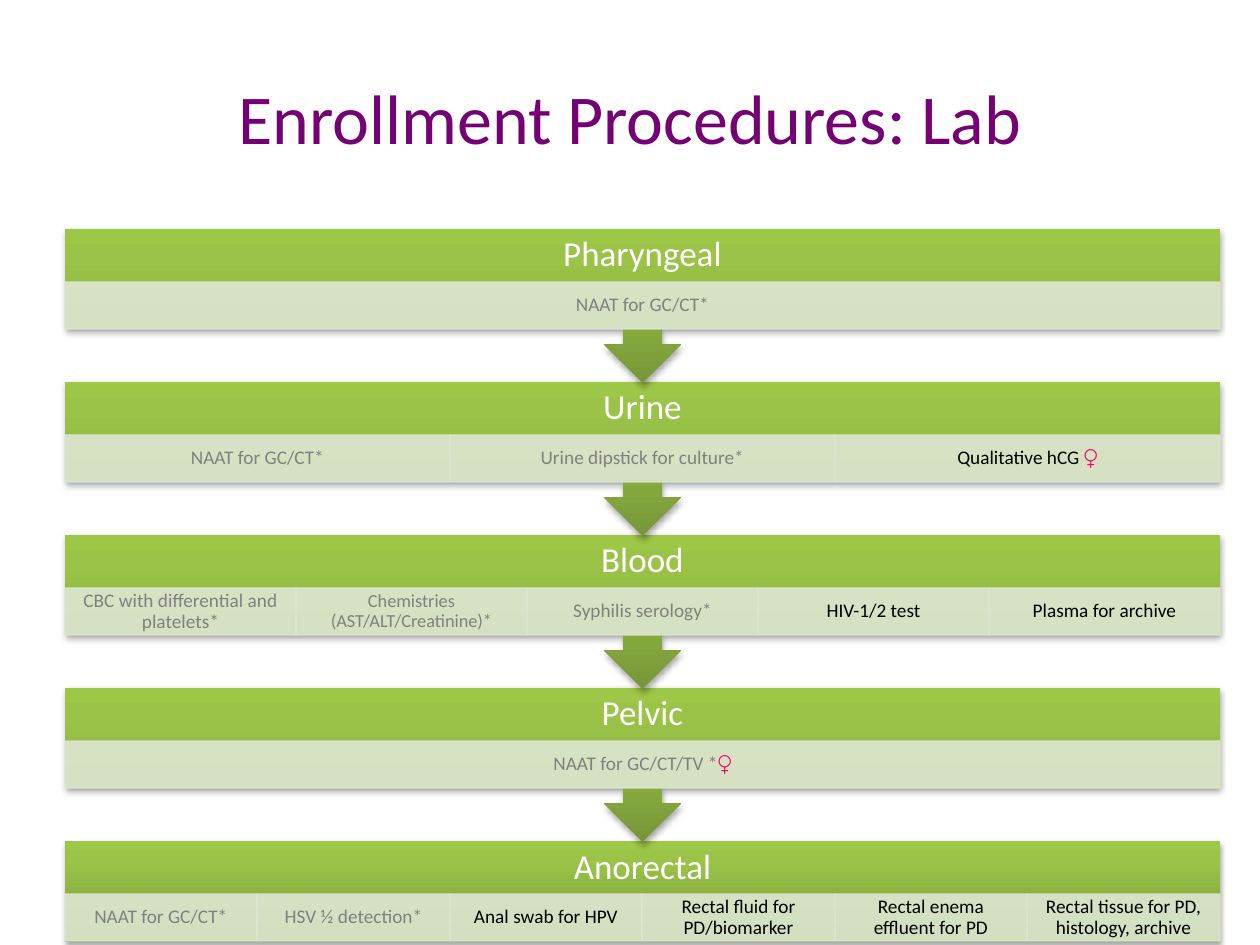
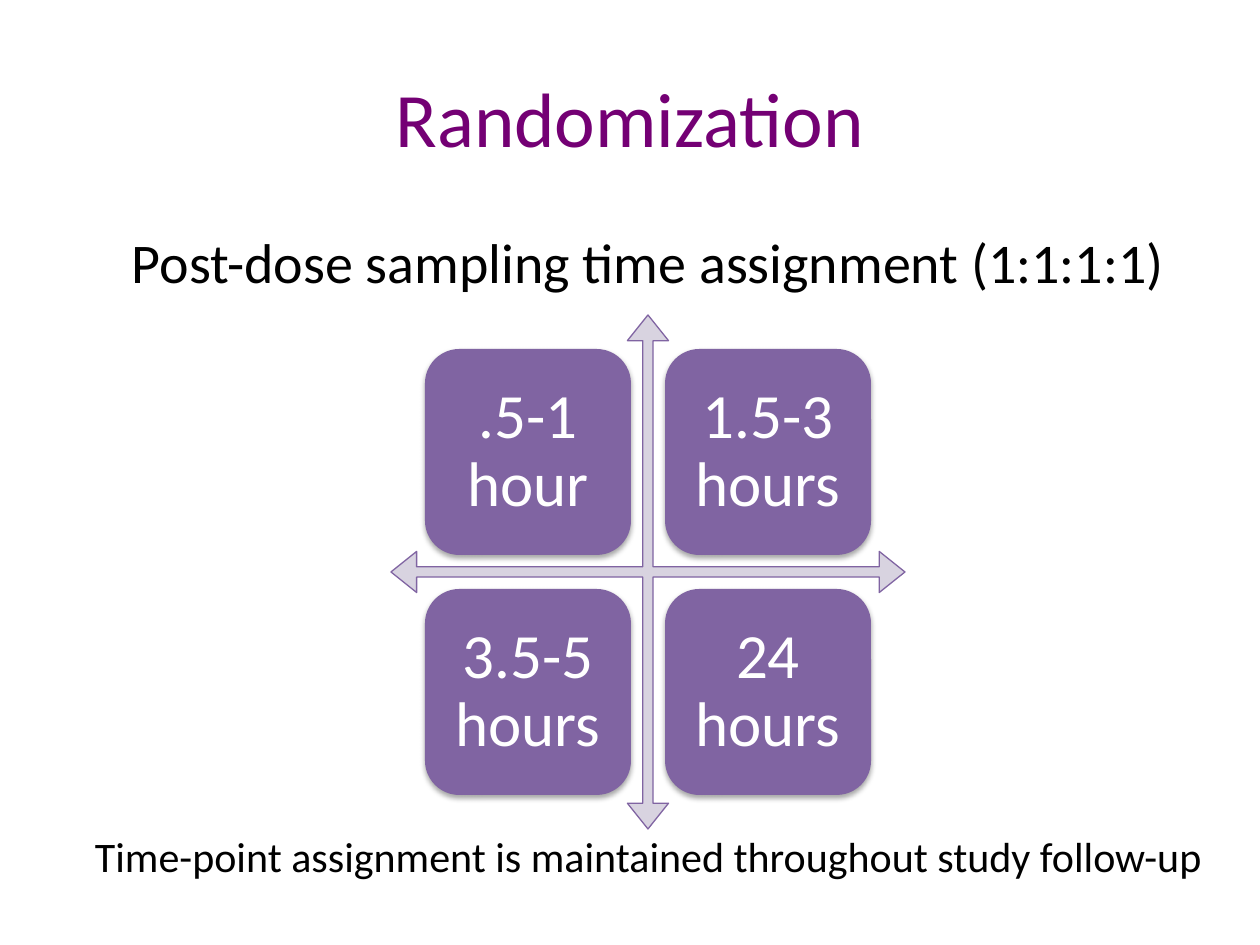
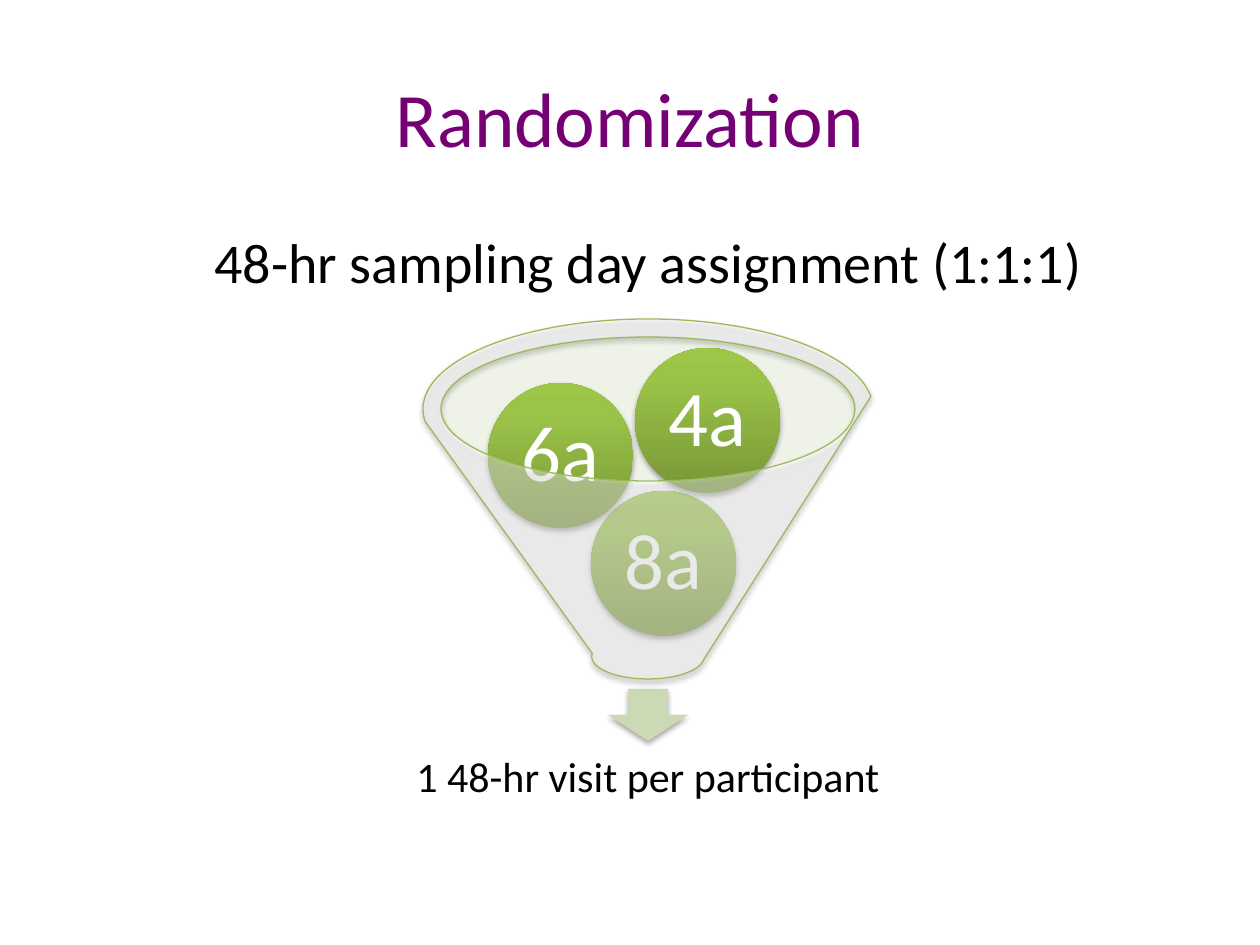
from lxml import etree
from pptx import Presentation
from pptx.dml.color import RGBColor
from pptx.enum.shapes import MSO_SHAPE
from pptx.enum.text import MSO_ANCHOR, PP_ALIGN
from pptx.oxml.ns import qn
from pptx.util import Pt

RECT = MSO_SHAPE.RECTANGLE
ROUNDED = MSO_SHAPE.ROUNDED_RECTANGLE
OVAL = MSO_SHAPE.OVAL
CALLOUT = MSO_SHAPE.DOWN_ARROW_CALLOUT
DOWN_ARROW = MSO_SHAPE.DOWN_ARROW
QUAD_ARROW = MSO_SHAPE.QUAD_ARROW
FUNNEL = MSO_SHAPE.FUNNEL
CENTER = PP_ALIGN.CENTER
TOP, MIDDLE = MSO_ANCHOR.TOP, MSO_ANCHOR.MIDDLE

EMU_PER_PX = 914400 / 126
FONT = "Calibri"
TITLE, BLACK, WHITE, GRAY, PINK = "740074", "000000", "FFFFFF", "808080", "FF0066"
CELL, PURPLE, LAVENDER = "DEE7D1", "8064A2", "D8D3E0"
FUNNEL_MOUTH, FUNNEL_LINE, FUNNEL_ARROW = "D5E0C4", "9BBB59", "CBDAB5"
GREEN_STOPS = [(0, "779737"), (80, "9BC348"), (100, "9DC746")]

TITLE_BOX = (63, 38, 1134, 158)
HEADING_BOX = (63, 222, 1171, 80)
FOOTNOTE_BOX = (63, 825, 1171, 63)
FEMALE = "♀"

LAB_STEPS = [
    ("Pharyngeal", ["NAAT for GC/CT*"]),
    ("Urine", ["NAAT for GC/CT*", "Urine dipstick for culture*", "Qualitative hCG ♀"]),
    ("Blood", ["CBC with differential and platelets*", "Chemistries (AST/ALT/Creatinine)*",
               "Syphilis serology*", "HIV-1/2 test", "Plasma for archive"]),
    ("Pelvic", ["NAAT for GC/CT/TV *♀"]),
    ("Anorectal", ["NAAT for GC/CT*", "HSV ½ detection*", "Anal swab for HPV",
                   "Rectal fluid for PD/biomarker", "Rectal enema effluent for PD",
                   "Rectal tissue for PD, histology, archive"]),
]
TIME_POINTS = [".5-1 hour", "1.5-3 hours", "3.5-5 hours", "24 hours"]
SAMPLING_DAYS = [("8a", 168, 172), ("6a", 65, 64), ("4a", 212, 29)]


def px(n):
    return round(n * EMU_PER_PX)


def rgb(color):
    return RGBColor.from_string(color)


def set_alpha(parent, percent):
    """Make every plain colour below parent partly transparent."""
    for clr in parent.iter(qn("a:srgbClr")):
        etree.SubElement(clr, qn("a:alpha"), val=str(percent * 1000))


def add_shadow(sp):
    effects = sp._element.spPr.find(qn("a:effectLst"))
    shadow = etree.SubElement(effects, qn("a:outerShdw"), blurRad="40000", dist="23000",
                              dir="5400000", rotWithShape="0")
    etree.SubElement(shadow, qn("a:srgbClr"), val=BLACK)
    set_alpha(shadow, 35)


def fill_green(sp):
    """Fill with the three-stop green gradient, dark at the bottom."""
    sp.fill.gradient()
    sp.fill.gradient_angle = 90
    stops = sp._element.spPr.find(".//" + qn("a:gsLst"))
    for gs in list(stops):
        stops.remove(gs)
    for pos, color in GREEN_STOPS:
        gs = etree.SubElement(stops, qn("a:gs"), pos=str(pos * 1000))
        etree.SubElement(gs, qn("a:srgbClr"), val=color)


def add_shape(s, kind, x, y, w, h, fill=None, line=None, alpha=None, shadow=False):
    """Add a preset shape; without a fill colour it gets the green gradient."""
    sp = s.shapes.add_shape(kind, px(x), px(y), px(w), px(h))
    if fill:
        sp.fill.solid()
        sp.fill.fore_color.rgb = rgb(fill)
    else:
        fill_green(sp)
    if line:
        sp.line.color.rgb = rgb(line)
        sp.line.width = Pt(0.75)
    else:
        sp.line.fill.background()
    if alpha:
        set_alpha(sp._element.spPr.find(qn("a:solidFill")), alpha)
    sp.shadow.inherit = False
    if shadow:
        add_shadow(sp)
    return sp


def write(sp, text, size, color=WHITE, spacing=0.9, anchor=MIDDLE, insets=(0, 0, 0, 0)):
    """Put one centred paragraph in a shape; female signs turn pink."""
    tf = sp.text_frame
    tf.word_wrap = True
    tf.vertical_anchor = anchor
    tf.margin_left, tf.margin_top, tf.margin_right, tf.margin_bottom = map(px, insets)
    p = tf.paragraphs[0]
    p.alignment = CENTER
    p.line_spacing = spacing
    label, sign, _ = text.partition(FEMALE)
    for part, part_color in ((label, color), (sign, PINK)):
        if part:
            r = p.add_run()
            r.text = part
            r.font.name = FONT
            r.font.size = Pt(size)
            r.font.color.rgb = rgb(part_color)


def add_text(s, box, text, size, color=BLACK, spacing=1.0, anchor=TOP):
    sp = s.shapes.add_textbox(*map(px, box))
    write(sp, text, size, color, spacing, anchor, insets=(13, 6, 13, 6))


def add_slide(prs, title, title_size=44, heading=None):
    s = prs.slides.add_slide(prs.slide_layouts[6])
    add_text(s, TITLE_BOX, title, title_size, TITLE, anchor=MIDDLE)
    if heading:
        add_text(s, HEADING_BOX, heading, 32)
    return s


def add_lab_step(s, x, y, w, name, tests, is_last):
    header_h, cell_h, callout_h = 53, 47, 154
    kind, h = (RECT, header_h + cell_h + 1) if is_last else (CALLOUT, callout_h)
    sp = add_shape(s, kind, x, y, w, h, shadow=True)
    write(sp, name, 20, insets=(20, 0, 20, cell_h))
    for i, test in enumerate(tests):
        left, right = w * i // len(tests), w * (i + 1) // len(tests)
        cell = add_shape(s, RECT, x + left, y + header_h, right - left, cell_h, CELL, CELL)
        set_alpha(cell._element.spPr, 90)
        size = 10.5 if test.startswith("Chemistries") else 11
        write(cell, test, size, GRAY if "*" in test else BLACK, insets=(11, 3, 11, 3))


def add_lab_flow(s, x, y, w):
    step_pitch = 153
    last = len(LAB_STEPS) - 1
    for i in range(last, -1, -1):
        add_lab_step(s, x, y + i * step_pitch, w, *LAB_STEPS[i], is_last=i == last)


def add_time_matrix(s, x, y, side):
    margin, tile = 34, 206
    pitch = side - 2 * margin - tile
    arrows = add_shape(s, QUAD_ARROW, x, y, side, side, LAVENDER, PURPLE)
    for i, value in enumerate((0.02, 0.04, 0.05)):
        arrows.adjustments[i] = value
    for i, label in enumerate(TIME_POINTS):
        row, col = divmod(i, 2)
        sp = add_shape(s, ROUNDED, x + margin + col * pitch, y + margin + row * pitch,
                       tile, tile, PURPLE, shadow=True)
        write(sp, label, 36, insets=(19, 19, 19, 19))


def add_day_funnel(s, x, y, w, h):
    ball, mouth_inset, arrow_w = 145, 17, 80
    add_shape(s, OVAL, x + mouth_inset, y + 17, w - 2 * mouth_inset, 144,
              FUNNEL_MOUTH, alpha=40)
    add_shape(s, DOWN_ARROW, x + (w - arrow_w) // 2, y + h + 10, arrow_w, 52,
              FUNNEL_ARROW, shadow=True)
    add_text(s, (x - 37, y + h + 51, w + 74, 97), "1 48-hr visit per participant", 24,
             spacing=0.9, anchor=MIDDLE)
    for day, dx, dy in SAMPLING_DAYS:
        sp = add_shape(s, OVAL, x + dx, y + dy, ball, ball, shadow=True)
        write(sp, day, 45, insets=(8, 8, 8, 8))
    add_shape(s, FUNNEL, x, y, w, h, WHITE, FUNNEL_LINE, alpha=40, shadow=True)


def main():
    prs = Presentation()
    prs.slide_width, prs.slide_height = px(1260), px(945)

    s = add_slide(prs, "Enrollment Procedures: Lab", 40)
    add_lab_flow(s, 65, 229, 1155)

    s = add_slide(prs, "Randomization", heading="Post-dose sampling time assignment (1:1:1:1)")
    add_text(s, FOOTNOTE_BOX, "Time-point assignment is maintained throughout study follow-up", 24)
    add_time_matrix(s, 391, 315, 514)

    s = add_slide(prs, "Randomization", heading="48-hr sampling day assignment (1:1:1)")
    add_day_funnel(s, 423, 319, 450, 360)

    prs.save("out.pptx")


if __name__ == "__main__":
    main()
